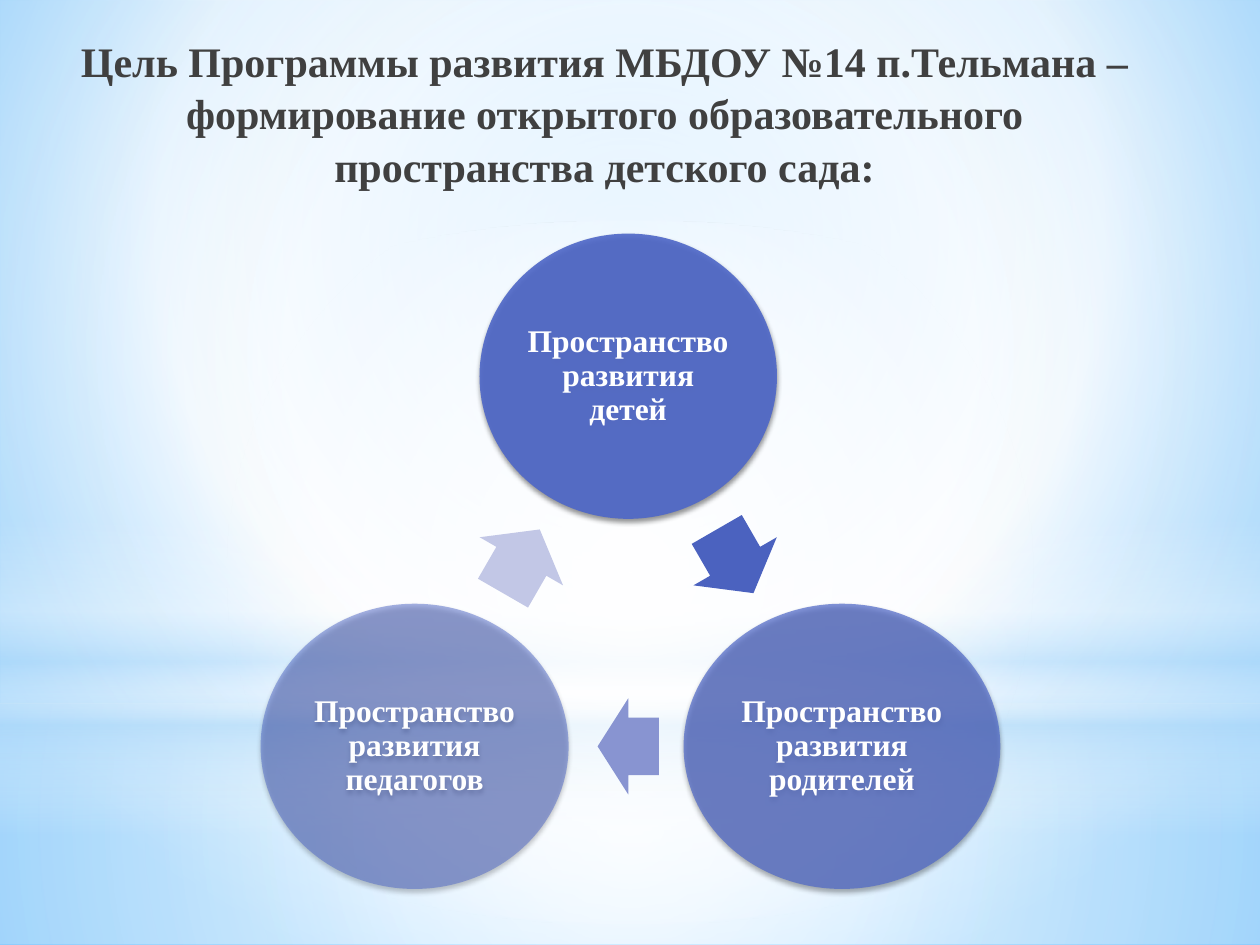
from math import cos, radians, sin

from lxml.etree import SubElement
from pptx import Presentation
from pptx.dml.color import RGBColor
from pptx.enum.shapes import MSO_SHAPE
from pptx.enum.text import MSO_ANCHOR, PP_ALIGN
from pptx.oxml.ns import qn
from pptx.util import Pt

HUES = {
    "white": "FFFFFF", "pale": "B4DCFA", "sky": "9ED5FF", "deep": "5BB9FF",
    "ink": "404040", "ball": "4E67C8", "black": "000000",
    "dark": "4B62BF", "mid": "8894D1", "light": "C2C7E6",
}
FONT = "Times New Roman"
HEAD = ("Цель Программы развития МБДОУ №14 п.Тельмана – "
        "формирование открытого образовательного пространства детского сада:")
MID_X, MID_Y = 359, 356
BALL_R, LINK_R = 141, 70.5
BALLS = [
    ("Пространство развития детей", 170, 90),
    ("Пространство развития родителей", 181, 70),
    ("Пространство развития педагогов", 176, 50),
]
LINKS = [("dark", 42), ("mid", 35), ("light", 42)]
ROUND = (50, 50, 50, 50)
PANELS = [
    (MSO_SHAPE.RECTANGLE, 402, 138,
     [(0, "white", 91), (37, "white", 76), (100, "pale", 79)], ROUND),
    (MSO_SHAPE.RECTANGLE, 0, 402,
     [(0, "white", 89), (48, "white", 62), (100, "pale", 79)], ROUND),
    (MSO_SHAPE.RECTANGLE, 297, 180,
     [(0, "white", 0), (29, "white", 30), (45, "pale", 40),
      (55, "white", 26), (65, "pale", 60), (100, "white", 0)], None),
    (MSO_SHAPE.OVAL, 126, 402,
     [(0, "white", 100), (56, "white", 0)], ROUND),
]


def node(host, tag, **attrs):
    return SubElement(host, qn(tag), {k: str(v) for k, v in attrs.items()})


def tint(host, hue, part):
    clr = node(host, "a:srgbClr", val=HUES[hue])
    node(clr, "a:alpha", val=part * 1000)


def blend(host, stops, focus=None):
    old = host.find(qn("a:solidFill"))
    grad = node(host, "a:gradFill", rotWithShape=1)
    steps = node(grad, "a:gsLst")
    for pos, hue, part in stops:
        tint(node(steps, "a:gs", pos=pos * 1000), hue, part)
    if focus:
        ring = node(grad, "a:path", path="circle")
        sides = {k: v * 1000 for k, v in zip("ltrb", focus)}
        node(ring, "a:fillToRect", **sides)
    else:
        node(grad, "a:lin", ang=90 * 60000, scaled=0)
    host.replace(old, grad)


def paint(shape, hue):
    shape.fill.solid()
    shape.fill.fore_color.rgb = RGBColor.from_string(HUES[hue])


def add_form(slide, kind, x, y, w, h, hue):
    shape = slide.shapes.add_shape(kind, Pt(x), Pt(y), Pt(w), Pt(h))
    shape.shadow.inherit = False
    shape.line.fill.background()
    paint(shape, hue)
    return shape


def write(frame, text, size, hue, space):
    frame.word_wrap = True
    para = frame.paragraphs[0]
    para.alignment = PP_ALIGN.CENTER
    para.line_spacing = space
    run = para.add_run()
    run.text = text
    run.font.name = FONT
    run.font.size = Pt(size)
    run.font.bold = True
    run.font.color.rgb = RGBColor.from_string(HUES[hue])


def add_back(slide):
    slide.background.fill.solid()
    host = slide.element.find(".//" + qn("p:bgPr"))
    blend(host, [(0, "sky", 100), (60, "white", 100), (100, "deep", 100)],
          (20, 10, 20, 60))
    for kind, top, high, stops, focus in PANELS:
        panel = add_form(slide, kind, 0, top, 720, high, "white")
        blend(panel.element.spPr, stops, focus)


def add_head(slide):
    title = slide.shapes.title
    title.left, title.top = Pt(37), Pt(15)
    title.width, title.height = Pt(617), Pt(108)
    title.text_frame.vertical_anchor = MSO_ANCHOR.TOP
    write(title.text_frame, HEAD, 24, "ink", 1.05)
    slide.shapes.element.append(title.element)


def place(angle, reach):
    turn = radians(angle)
    return MID_X + reach * cos(turn), MID_Y + reach * sin(turn)


def add_ball(slide, step, text, wide, part):
    high = 163
    x, y = place(120 * step - 90, BALL_R)
    ball = add_form(slide, MSO_SHAPE.OVAL, x - wide / 2, y - high / 2,
                    wide, high, "ball")
    props = ball.element.spPr
    clr = props.find(qn("a:solidFill"))[0]
    node(clr, "a:alpha", val=part * 1000)
    shade = node(props.find(qn("a:effectLst")), "a:outerShdw",
                 blurRad=Pt(3.1), dist=Pt(1.8), dir=90 * 60000,
                 rotWithShape=0)
    tint(shade, "black", 45)
    frame = ball.text_frame
    frame.margin_left = frame.margin_right = Pt(2)
    frame.margin_top = frame.margin_bottom = Pt(2)
    frame.vertical_anchor = MSO_ANCHOR.MIDDLE
    write(frame, text, 18, "white", 0.9)


def add_link(slide, step, hue, wide):
    high = 55
    x, y = place(120 * step - 30, LINK_R)
    link = add_form(slide, MSO_SHAPE.RIGHT_ARROW, x - wide / 2, y - high / 2,
                    wide, high, hue)
    link.rotation = 120 * step + 60
    link.adjustments[0] = 0.6
    link.adjustments[1] = 0.5


def main():
    deck = Presentation()
    deck.slide_width, deck.slide_height = Pt(720), Pt(540)
    slide = deck.slides.add_slide(deck.slide_layouts[5])
    add_back(slide)
    add_head(slide)
    for step, (ball, link) in enumerate(zip(BALLS, LINKS)):
        add_ball(slide, step, *ball)
        add_link(slide, step, *link)
    deck.save("out.pptx")


if __name__ == "__main__":
    main()
